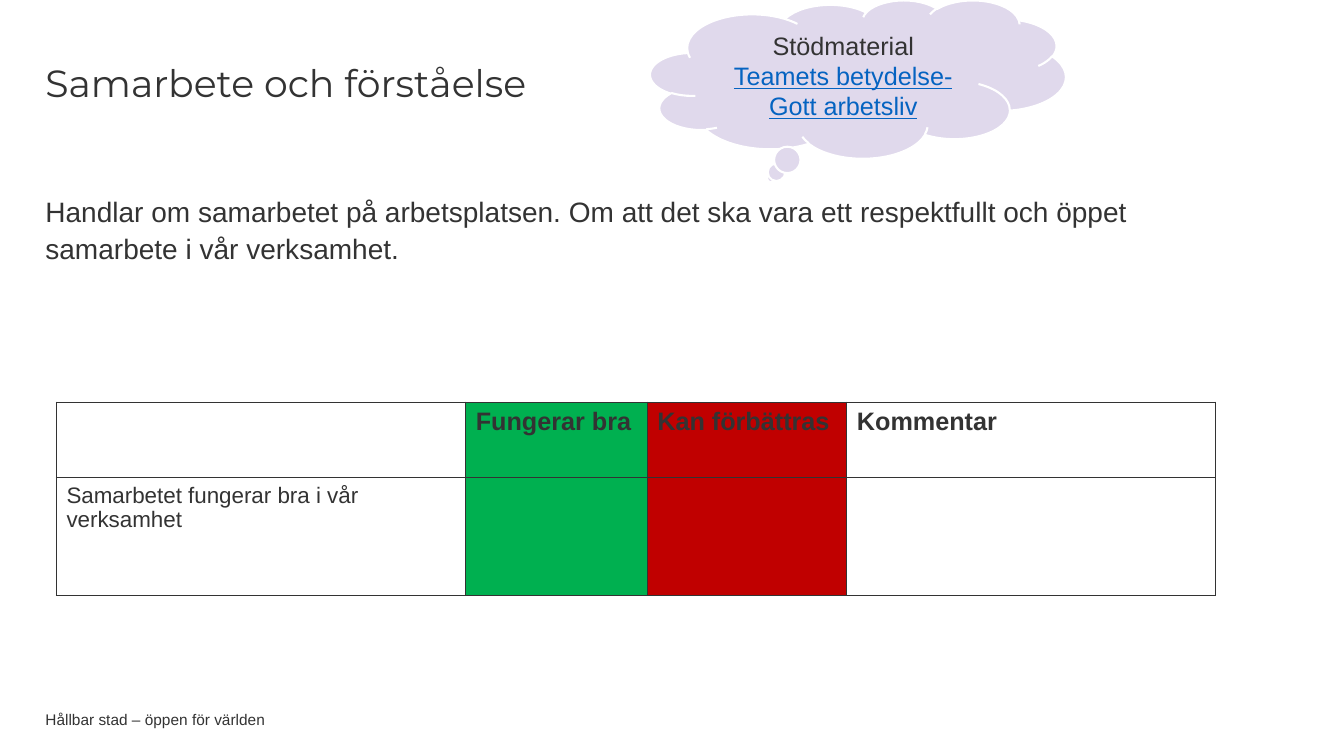
from lxml.etree import SubElement
from pptx import Presentation
from pptx.dml.color import RGBColor
from pptx.enum.shapes import MSO_SHAPE
from pptx.enum.text import MSO_ANCHOR, MSO_AUTO_SIZE, PP_ALIGN
from pptx.oxml.ns import qn
from pptx.util import Inches, Pt

COLORS = {"text": "333333", "good": "00B050", "improve": "C00000",
          "cloud": "E0D9EC", "white": "FFFFFF", "link": "0563C1"}


def rgb(name):
    return RGBColor.from_string(COLORS[name])


def add_run(p, text, size, font="Arial", color="text", bold=False):
    r = p.add_run()
    r.text = text
    r.font.name, r.font.size, r.font.bold = font, Pt(size), bold
    r.font.color.rgb = rgb(color)
    return r


def place(sp, box):
    sp.left, sp.top, sp.width, sp.height = [Inches(v) for v in box]


def set_frame(tf, anchor, inset_y=0):
    tf.word_wrap = True
    tf.auto_size = MSO_AUTO_SIZE.NONE
    tf.vertical_anchor = anchor
    tf.margin_left = tf.margin_right = 0
    tf.margin_top = tf.margin_bottom = Inches(inset_y)


def add_title(s, box):
    sp = s.shapes.title
    place(sp, box)
    set_frame(sp.text_frame, MSO_ANCHOR.MIDDLE, 0.05)
    p = sp.text_frame.paragraphs[0]
    p.alignment, p.line_spacing = PP_ALIGN.LEFT, 0.9
    add_run(p, "Samarbete och förståelse", 27, "Montserrat")


def add_body(s, box):
    sp = s.placeholders[1]
    place(sp, box)
    set_frame(sp.text_frame, MSO_ANCHOR.TOP)
    p = sp.text_frame.paragraphs[0]
    pPr = p._p.get_or_add_pPr()
    pPr.set("marL", "0")
    pPr.set("indent", "0")
    SubElement(pPr, qn("a:buNone"))
    p.line_spacing, p.space_before, p.space_after = 1.1, Pt(0), Pt(3)
    add_run(p, "Handlar om samarbetet på arbetsplatsen. Om att det ska vara "
               "ett respektfullt och öppet samarbete i vår verksamhet.", 20)


def add_footer(s, box):
    sp = s.shapes.add_textbox(*[Inches(v) for v in box])
    set_frame(sp.text_frame, MSO_ANCHOR.MIDDLE)
    add_run(sp.text_frame.paragraphs[0], "Hållbar stad – öppen för världen", 11)


def add_borders(cell):
    tcPr = cell._tc.get_or_add_tcPr()
    for side in ("lnL", "lnR", "lnT", "lnB"):
        ln = SubElement(tcPr, qn(f"a:{side}"), w=str(Pt(1)))
        fill = SubElement(ln, qn("a:solidFill"))
        SubElement(fill, qn("a:srgbClr"), val=COLORS["text"])


def add_rating_table(s, box):
    rows = [["", "Fungerar bra", "Kan förbättras", "Kommentar"],
            ["Samarbetet fungerar bra i vår verksamhet", "", "", ""]]
    fills = [None, "good", "improve", None]
    table = s.shapes.add_table(2, 4, *[Inches(v) for v in box]).table
    table.first_row = table.horz_banding = False
    for col, width in zip(table.columns, (4.06, 1.8, 1.98, 3.66)):
        col.width = Inches(width)
    for row, height in zip(table.rows, (0.75, 1.17)):
        row.height = Inches(height)
    for i, texts in enumerate(rows):
        for j, (text, fill) in enumerate(zip(texts, fills)):
            cell = table.cell(i, j)
            add_borders(cell)
            if fill:
                cell.fill.solid()
                cell.fill.fore_color.rgb = rgb(fill)
            else:
                cell.fill.background()
            if text:
                header = i == 0
                add_run(cell.text_frame.paragraphs[0], text,
                        18 if header else 16, bold=header)


def add_cloud(s, box):
    sp = s.shapes.add_shape(MSO_SHAPE.CLOUD_CALLOUT, *[Inches(v) for v in box])
    sp.shadow.inherit = False
    sp.fill.solid()
    sp.fill.fore_color.rgb = rgb("cloud")
    sp.line.color.rgb = rgb("white")
    sp.line.width = Pt(1.5)
    tf = sp.text_frame
    tf.word_wrap = True
    tf.vertical_anchor = MSO_ANCHOR.MIDDLE
    p = tf.paragraphs[0]
    p.alignment = PP_ALIGN.CENTER
    add_run(p, "Stödmaterial", 18)
    p = tf.add_paragraph()
    p.alignment = PP_ALIGN.CENTER
    r = add_run(p, "Teamets betydelse- Gott arbetsliv", 18, color="link")
    r.font.underline = True


def main():
    prs = Presentation()
    prs.slide_width, prs.slide_height = Inches(13.33), Inches(7.5)
    s = prs.slides.add_slide(prs.slide_layouts[1])
    add_title(s, (0.45, 0.44, 10.03, 0.81))
    add_body(s, (0.45, 1.9, 11.62, 4.57))
    add_footer(s, (0.45, 7.06, 9.45, 0.16))
    add_rating_table(s, (0.56, 3.99, 11.5, 1.92))
    add_cloud(s, (6.45, 0, 4.12, 1.57))
    prs.save("out.pptx")


if __name__ == "__main__":
    main()
